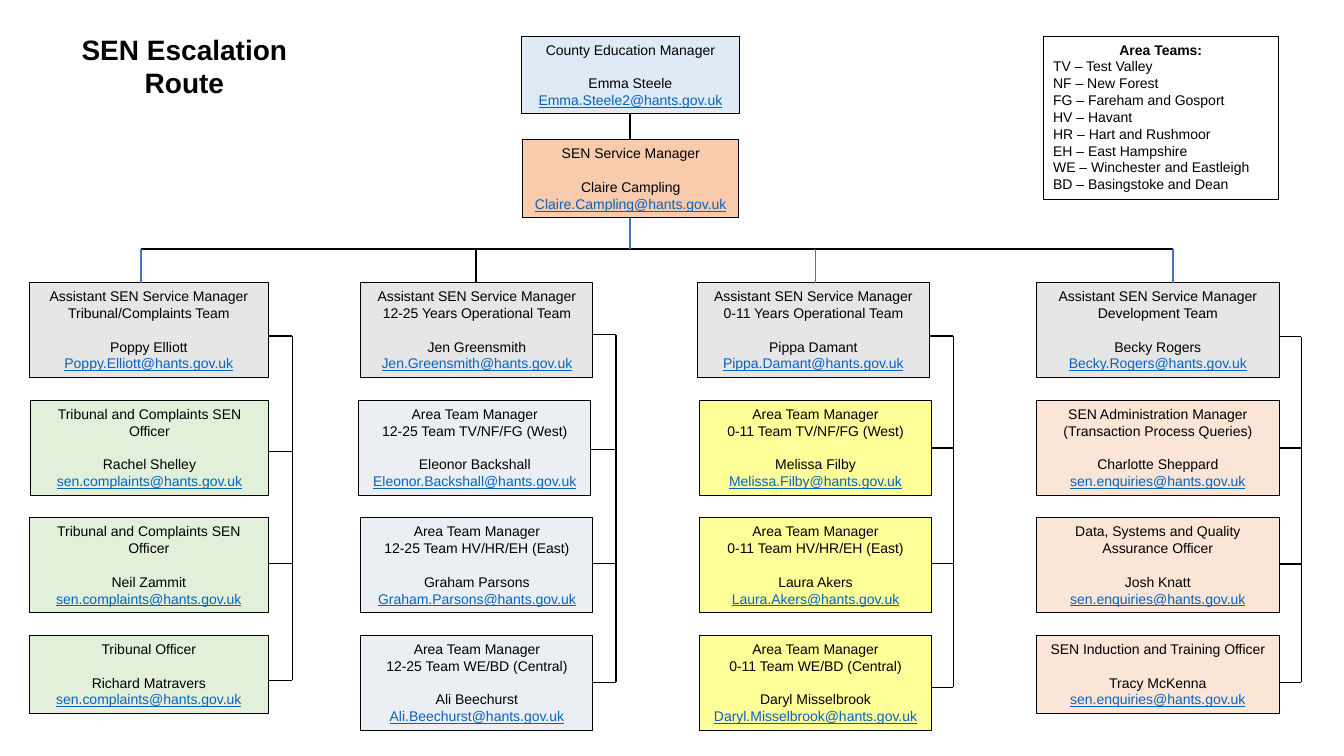
from dataclasses import dataclass

from lxml import etree
from pptx import Presentation
from pptx.dml.color import RGBColor
from pptx.enum import shapes, text
from pptx.oxml import ns
from pptx.util import Pt


@dataclass(frozen=True)
class Theme:
    font: str = "Arial"
    body: float = 10
    title: float = 20
    gap: float = 12  # one text line between role and name
    black: str = "000000"
    white: str = "FFFFFF"
    link: str = "0563C1"
    accent: str = "4472C4"
    county: str = "DEEBF7"
    service: str = "F8CBAD"
    assistant: str = "E7E6E6"
    tribunal: str = "E2F0D9"
    older: str = "EBEEF2"
    younger: str = "FFFF99"
    development: str = "FBE5D6"


T = Theme()
CENTER, LEFT = text.PP_ALIGN.CENTER, text.PP_ALIGN.LEFT
TALL, SHORT = 67.7, 55.4
ROW_TOP, ROW_PITCH = 202, 84
BUS_Y = 178


@dataclass(frozen=True)
class Column:
    left: float
    width: float
    fill: str
    drop: float  # x of the line down from the bus
    drop_color: str
    spine: float  # x of the bracket beside the cards
    stubs: tuple  # y of each bracket arm
    indents: tuple  # shift of each card from the column's left
    cards: tuple  # (role lines, name, email, height)


COLUMNS = (
    Column(21, 170.5, T.tribunal, 100.8, T.accent, 208.8, (240, 322.5, 402.5, 486), (0, 0.5, 0, 0), (
        (("Assistant SEN Service Manager", "Tribunal/Complaints Team"),
         "Poppy Elliott", "Poppy.Elliott@hants.gov.uk", TALL),
        (("Tribunal and Complaints SEN Officer",),
         "Rachel Shelley", "sen.complaints@hants.gov.uk", TALL),
        (("Tribunal and Complaints SEN Officer",),
         "Neil Zammit", "sen.complaints@hants.gov.uk", TALL),
        (("Tribunal Officer",),
         "Richard Matravers", "sen.complaints@hants.gov.uk", SHORT))),
    Column(257.8, 165.6, T.older, 340, T.black, 440, (239, 321, 402.5, 487.5), (0, -1.5, 0, 0), (
        (("Assistant SEN Service Manager", "12-25 Years Operational Team"),
         "Jen Greensmith", "Jen.Greensmith@hants.gov.uk", TALL),
        (("Area Team Manager", "12-25 Team TV/NF/FG (West)"),
         "Eleonor Backshall", "Eleonor.Backshall@hants.gov.uk", TALL),
        (("Area Team Manager", "12-25 Team HV/HR/EH (East)"),
         "Graham Parsons", "Graham.Parsons@hants.gov.uk", TALL),
        (("Area Team Manager", "12-25 Team WE/BD (Central)"),
         "Ali Beechurst", "Ali.Beechurst@hants.gov.uk", TALL))),
    Column(498.2, 165.6, T.younger, 582.5, T.accent, 681, (240, 320, 402.5, 491), (0, 1.5, 1.5, 1.5), (
        (("Assistant SEN Service Manager", "0-11 Years Operational Team"),
         "Pippa Damant", "Pippa.Damant@hants.gov.uk", TALL),
        (("Area Team Manager", "0-11 Team TV/NF/FG (West)"),
         "Melissa Filby", "Melissa.Filby@hants.gov.uk", TALL),
        (("Area Team Manager", "0-11 Team HV/HR/EH (East)"),
         "Laura Akers", "Laura.Akers@hants.gov.uk", TALL),
        (("Area Team Manager", "0-11 Team WE/BD (Central)"),
         "Daryl Misselbrook", "Daryl.Misselbrook@hants.gov.uk", TALL))),
    Column(740.2, 173.5, T.development, 838, T.accent, 929.5, (240.5, 320, 403, 487.5), (0, 0, 0, 0), (
        (("Assistant SEN Service Manager", "Development Team"),
         "Becky Rogers", "Becky.Rogers@hants.gov.uk", TALL),
        (("SEN Administration Manager", "(Transaction Process Queries)"),
         "Charlotte Sheppard", "sen.enquiries@hants.gov.uk", TALL),
        (("Data, Systems and Quality Assurance Officer",),
         "Josh Knatt", "sen.enquiries@hants.gov.uk", TALL),
        (("SEN Induction and Training Officer",),
         "Tracy McKenna", "sen.enquiries@hants.gov.uk", SHORT))),
)

AREA_TEAMS = (
    "TV – Test Valley", "NF – New Forest", "FG – Fareham and Gosport",
    "HV – Havant", "HR – Hart and Rushmoor", "EH – East Hampshire",
    "WE – Winchester and Eastleigh", "BD – Basingstoke and Dean",
)


def add_text(tf, words, *, first=False, size=T.body, color=T.black, bold=False,
             underline=False, align=CENTER, before=0):
    p = tf.paragraphs[0] if first else tf.add_paragraph()
    p.alignment = align
    p.space_before = Pt(before)
    r = p.add_run()
    r.text = words
    r.font.name, r.font.size = T.font, Pt(size)
    r.font.bold, r.font.underline = bold, underline
    r.font.color.rgb = RGBColor.from_string(color)


def add_box(s, x, y, w, h, fill):
    sp = s.shapes.add_shape(shapes.MSO_SHAPE.RECTANGLE, Pt(x), Pt(y), Pt(w), Pt(h))
    sp.shadow.inherit = False
    sp.fill.solid()
    sp.fill.fore_color.rgb = RGBColor.from_string(fill)
    sp.line.color.rgb = RGBColor.from_string(T.black)
    sp.line.width = Pt(0.75)
    tf = sp.text_frame
    tf.word_wrap = True
    tf.vertical_anchor = text.MSO_ANCHOR.TOP
    return tf


def add_card(s, x, y, w, h, fill, role, name, email):
    tf = add_box(s, x, y, w, h, fill)
    for i, line in enumerate(role):
        add_text(tf, line, first=i == 0)
    add_text(tf, name, before=T.gap)
    add_text(tf, email, color=T.link, underline=True)


def add_line(s, x1, y1, x2, y2, color=T.black):
    c = s.shapes.add_connector(shapes.MSO_CONNECTOR.STRAIGHT, Pt(x1), Pt(y1), Pt(x2), Pt(y2))
    c.line.color.rgb = RGBColor.from_string(color)
    c.line.width = Pt(1)
    etree.SubElement(c._element.spPr, ns.qn("a:effectLst"))


def add_title(s, words):
    tf = s.shapes.add_textbox(Pt(21), Pt(19.5), Pt(221.5), Pt(55.5)).text_frame
    tf.word_wrap = True
    add_text(tf, words, first=True, size=T.title, bold=True)


def add_legend(s):
    tf = add_box(s, 745.2, 25.8, 167.8, 116.6, T.white)
    add_text(tf, "Area Teams:", first=True, bold=True)
    for team in AREA_TEAMS:
        add_text(tf, team, align=LEFT)


def add_column(s, col):
    for i, (role, name, email, height) in enumerate(col.cards):
        x = col.left + col.indents[i]
        fill = col.fill if i else T.assistant
        add_card(s, x, ROW_TOP + i * ROW_PITCH, col.width, height, fill, role, name, email)
        add_line(s, x + col.width, col.stubs[i], col.spine, col.stubs[i])
    add_line(s, col.spine, col.stubs[0], col.spine, col.stubs[-1])
    add_line(s, col.drop, BUS_Y, col.drop, ROW_TOP, col.drop_color)


def main():
    prs = Presentation()
    prs.slide_width, prs.slide_height = Pt(960), Pt(540)
    s = prs.slides.add_slide(prs.slide_layouts[6])

    # Heading and key
    add_title(s, "SEN Escalation Route")
    add_legend(s)

    # Senior managers
    add_card(s, 372.5, 25.8, 155.5, SHORT, T.county, ("County Education Manager",),
             "Emma Steele", "Emma.Steele2@hants.gov.uk")
    add_card(s, 373.5, 100, 154, SHORT, T.service, ("SEN Service Manager",),
             "Claire Campling", "Claire.Campling@hants.gov.uk")
    add_line(s, 450, 81.2, 450, 100)

    # Bus line and the four teams
    add_line(s, COLUMNS[0].drop, BUS_Y, COLUMNS[-1].drop, BUS_Y)
    add_line(s, 450, 155.4, 450, BUS_Y, T.accent)
    for col in COLUMNS:
        add_column(s, col)

    prs.save("out.pptx")


if __name__ == "__main__":
    main()
